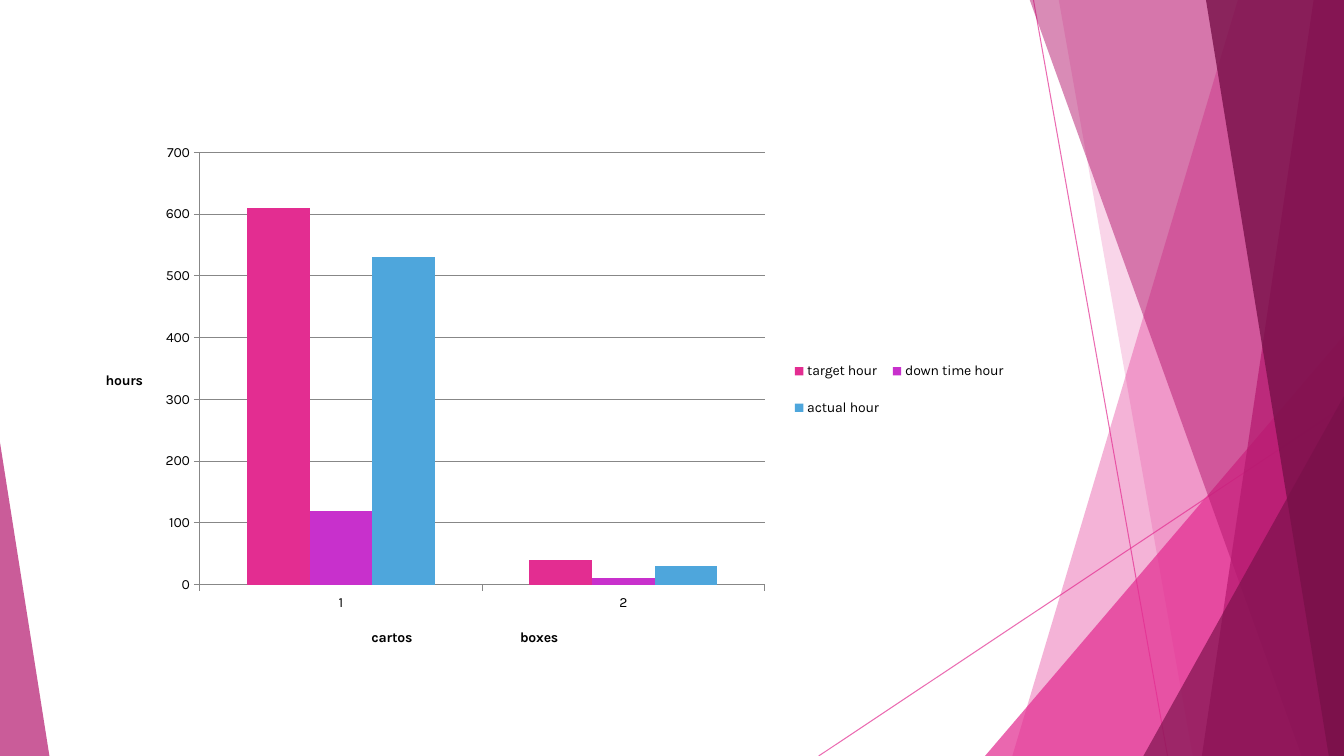
from lxml.etree import SubElement
from pptx import Presentation
from pptx.chart.data import CategoryChartData
from pptx.dml.color import RGBColor
from pptx.enum.chart import XL_CHART_TYPE, XL_LEGEND_POSITION, XL_TICK_MARK
from pptx.enum.shapes import MSO_CONNECTOR, MSO_SHAPE
from pptx.oxml import parse_xml
from pptx.oxml.ns import nsdecls, qn
from pptx.util import Inches, Pt

PINK, ROSE, PLUM = "E32D91", "B4186E", "781049"
WIDE, HIGH = 13.33, 7.5


def color(code):
    return RGBColor.from_string(code)


def fade(fill, percent):
    tint = fill._xPr.find(qn("a:solidFill"))[0]
    SubElement(tint, qn("a:alpha")).set("val", str(percent * 1000))


def layout(x, y, w=None, h=None, inner=False):
    """Chart layout in fractions of the chart area."""
    parts = ['<c:layoutTarget val="inner"/>'] if inner else []
    parts += ['<c:xMode val="edge"/>', '<c:yMode val="edge"/>']
    for key, val in zip("xywh", (x, y, w, h)):
        if val is not None:
            parts.append(f'<c:{key} val="{val}"/>')
    return parse_xml(f'<c:layout {nsdecls("c")}><c:manualLayout>'
                     f'{"".join(parts)}</c:manualLayout></c:layout>')


def place(node, after, *spot, **kind):
    """Set the layout of a chart part, behind the named child."""
    for old in node.findall(qn("c:layout")):
        node.remove(old)
    spot = layout(*spot, **kind)
    if after is None:
        node.insert(0, spot)
    else:
        node.find(qn(after)).addnext(spot)


class Deck:
    font, size, ink, grey = "Karla", 10, "000000", "878787"

    def __init__(self):
        self.prs = Presentation()
        self.prs.slide_width = Inches(WIDE)
        self.prs.slide_height = Inches(HIGH)
        self.slide = self.prs.slides.add_slide(self.prs.slide_layouts[6])
        self.shapes = self.slide.shapes

    def paint(self, shape, code, alpha):
        shape.shadow.inherit = False
        shape.fill.solid()
        shape.fill.fore_color.rgb = color(code)
        fade(shape.fill, alpha)
        shape.line.fill.background()

    def line(self, start, end, code, alpha):
        x1, y1, x2, y2 = map(Inches, (*start, *end))
        line = self.shapes.add_connector(MSO_CONNECTOR.STRAIGHT, x1, y1, x2, y2)
        line.line.width = Pt(0.75)
        line.line.color.rgb = color(code)
        fade(line.line.fill, alpha)
        SubElement(line._element.spPr, qn("a:effectLst"))

    def shard(self, top, foot, code, alpha):
        """A panel from a slanted left edge to the slide's right side."""
        path = [(top, -0.01), (WIDE, -0.01), (WIDE, HIGH), (foot, HIGH)]
        path = [(Inches(x), Inches(y)) for x, y in path]
        pen = self.shapes.build_freeform(*path[0])
        pen.add_line_segments(path[1:], close=True)
        self.paint(pen.convert_to_shape(), code, alpha)

    def wedge(self, left, top, width, peak, code, alpha):
        """A triangle that stands on the slide's lower edge."""
        shape = self.shapes.add_shape(
            MSO_SHAPE.ISOSCELES_TRIANGLE, Inches(left), Inches(top),
            Inches(width), Inches(HIGH - top))
        shape.adjustments[0] = peak
        self.paint(shape, code, alpha)

    def style(self, font, bold=False):
        font.name, font.size, font.bold = self.font, Pt(self.size), bold
        font.color.rgb = color(self.ink)

    def axis(self, axis, words, spot):
        axis.major_tick_mark = XL_TICK_MARK.OUTSIDE
        axis.minor_tick_mark = XL_TICK_MARK.NONE
        axis.format.line.color.rgb = color(self.grey)
        self.style(axis.tick_labels.font)
        title = axis.axis_title
        frame = title.text_frame
        para = frame.paragraphs[0]
        for num, word in enumerate(words):
            if num:
                # One widely tracked space on each side of a no-width joint
                for mark in (" ", "\u00a0"):
                    gap = para.add_run()
                    gap.text = mark
                    gap.font.bold = True
                    gap._r.get_or_add_rPr().set("spc", "3600")
            para.add_run().text = word
        self.style(para.font, True)
        for run in para.runs:
            self.style(run.font, True)
        frame._txBody.find(qn("a:bodyPr")).set("rot", "0")
        place(title._element, "c:tx", *spot)

    def chart(self, box, cats, rows):
        data = CategoryChartData()
        data.categories = cats
        for name, vals, _ in rows:
            data.add_series(name, vals)
        chart = self.shapes.add_chart(
            XL_CHART_TYPE.COLUMN_CLUSTERED, *map(Inches, box), data).chart
        self.style(chart.font)
        chart.has_title = False
        plot = chart.plots[0]
        plot.gap_width, plot.overlap, plot.vary_by_categories = 150, 0, False
        for bar, (_, _, code) in zip(plot.series, rows):
            bar.format.fill.solid()
            bar.format.fill.fore_color.rgb = color(code)
        # Axes
        self.axis(chart.category_axis, ["cartos", "boxes"], (0.31, 0.92))
        scale = chart.value_axis
        self.axis(scale, ["hours"], (0.03, 0.43))
        scale.minimum_scale, scale.maximum_scale, scale.major_unit = 0, 700, 100
        scale.major_gridlines.format.line.color.rgb = color(self.grey)
        # Legend and plot area
        chart.has_legend = True
        legend = chart.legend
        legend.position = XL_LEGEND_POSITION.LEFT
        legend.include_in_layout = False
        self.style(legend.font)
        place(legend._element, "c:legendPos", 0.75, 0.38, 0.24, 0.18)
        area = chart._chartSpace.chart.plotArea
        place(area, None, 0.132, 0.016, 0.596, 0.828, inner=True)


def main():
    deck = Deck()
    # Backdrop on the right
    deck.line((10.25, 0), (11.58, HIGH), PINK, 70)
    deck.line((WIDE, 4.03), (8.12, HIGH), PINK, 70)
    deck.shard(12.28, 10.04, PINK, 36)
    deck.shard(10.5, 11.83, PINK, 20)
    deck.wedge(9.77, 3.33, 3.56, 1, PINK, 72)
    deck.shard(10.21, 12.91, ROSE, 50)
    deck.shard(13.03, 11.92, ROSE, 70)
    deck.shard(11.96, 13.18, PLUM, 80)
    deck.wedge(11.34, 3.93, 1.99, 1, PLUM, 66)
    # Backdrop on the left
    deck.wedge(0, 4.39, 0.49, 0, ROSE, 70)
    # Hours by product
    deck.chart((0.74, 1.43, 9.4, 5.18), ["1", "2"], [
        ("target hour", (610, 40), PINK),
        ("down time hour", (120, 10), "C830CC"),
        ("actual hour", (530, 30), "4EA6DC"),
    ])
    deck.prs.save("out.pptx")


if __name__ == "__main__":
    main()
